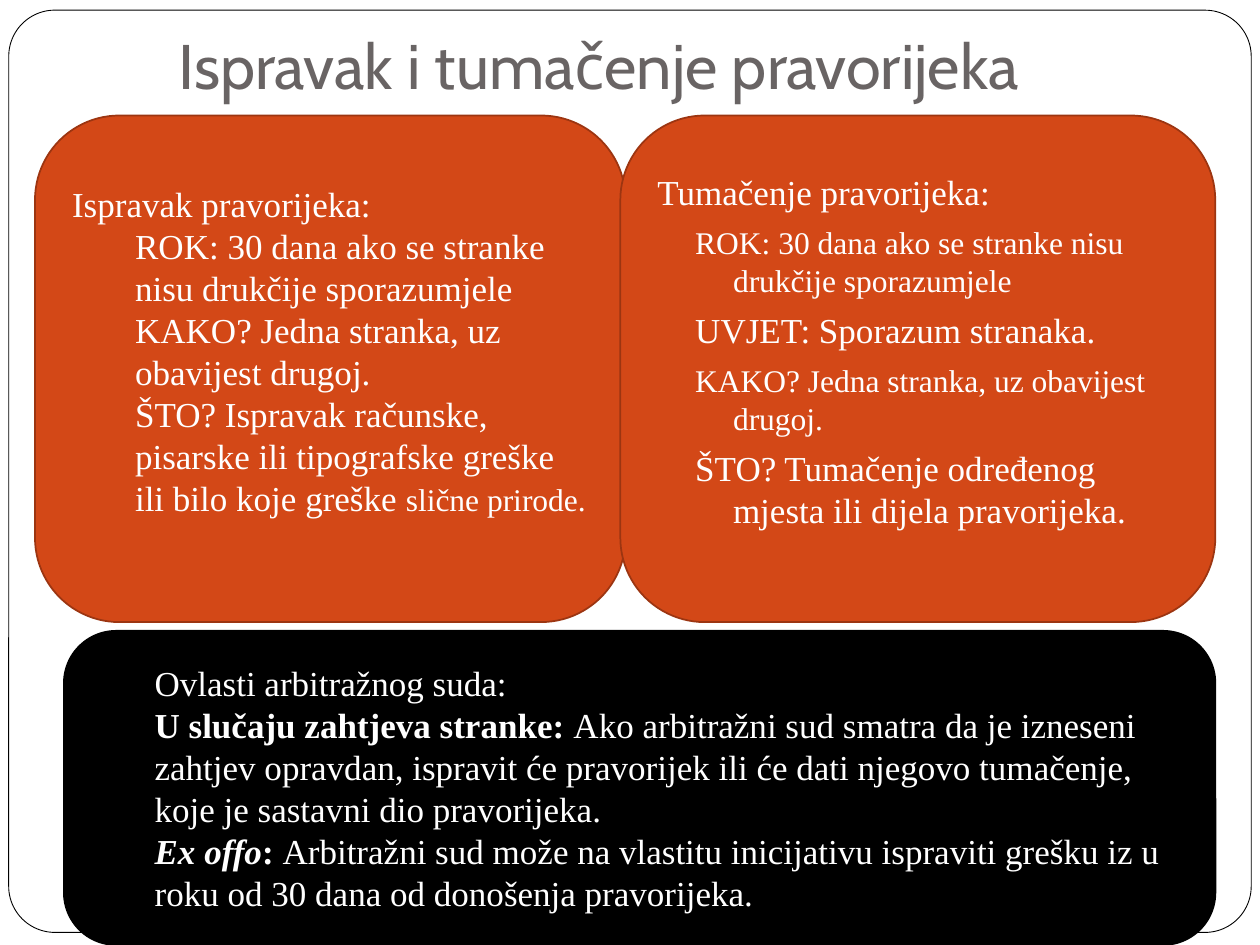
import pptx
import pptx.util
import pptx.dml.color
import pptx.enum.shapes
import pptx.enum.text

Pt = pptx.util.Pt
ANCHOR = pptx.enum.text.MSO_ANCHOR

COLORS = {
    "white": "FFFFFF",
    "black": "000000",
    "title": "696464",
    "orange": "D34817",
    "rust": "9C3511",
}
SERIF = {"name": "Times New Roman", "size": Pt(20), "color": "white"}
SMALL = {"size": Pt(18)}
BOLD = {"bold": True}
BOLD_ITALIC = {"bold": True, "italic": True}

PLAIN = {"level": 0, "left": 0, "first": 0, "before": 0}
NESTED = {"level": 1, "left": 36, "first": 0, "before": 0}
HANGING = {"level": 2, "left": 43.2, "first": -21.6, "before": 5.8}
TITLE_INDENT = {"level": 0, "left": 23, "first": 0, "before": 0}

FRAME = {"at": (5, 5.8, 710, 527), "fill": "white", "line": "black",
         "width": 0.5, "corner": 0.05}

TITLE = [(TITLE_INDENT, [("Ispravak i tumačenje pravorijeka", {})])]
TITLE_FONT = {"name": "Cabin", "size": Pt(36), "color": "title"}

CORRECTION = [
    (PLAIN, [("Ispravak pravorijeka:", {})]),
    (NESTED, [("ROK: 30 dana ako se stranke nisu drukčije sporazumjele", {})]),
    (NESTED, [("KAKO? Jedna stranka, uz obavijest drugoj.", {})]),
    (NESTED, [("ŠTO? Ispravak računske, pisarske ili tipografske greške "
               "ili bilo koje greške ", {}), ("slične prirode.", SMALL)]),
]
INTERPRETATION = [
    (PLAIN, [("Tumačenje pravorijeka:", {})]),
    (HANGING, [("ROK: 30 dana ako se stranke nisu drukčije sporazumjele", SMALL)]),
    (HANGING, [("UVJET: Sporazum stranaka.", {})]),
    (HANGING, [("KAKO? Jedna stranka, uz obavijest drugoj.", SMALL)]),
    (HANGING, [("ŠTO? Tumačenje određenog mjesta ili dijela pravorijeka.", {})]),
]
POWERS = [
    (NESTED, [("Ovlasti arbitražnog suda:", {})]),
    (NESTED, [("U slučaju zahtjeva stranke: ", BOLD),
              ("Ako arbitražni sud smatra da je izneseni zahtjev opravdan, "
               "ispravit će pravorijek ili će dati njegovo tumačenje, "
               "koje je sastavni dio pravorijeka.", {})]),
    (NESTED, [("Ex offo", BOLD_ITALIC), (": ", BOLD),
              ("Arbitražni sud može na vlastitu inicijativu ispraviti grešku "
               "iz u roku od 30 dana od donošenja pravorijeka.", {})]),
]

PANELS = [
    {"at": (20, 66, 337.5, 289.5), "fill": "orange", "line": "rust",
     "bottom": 24.3, "text": CORRECTION},
    {"at": (354.5, 66, 340, 289.5), "fill": "orange", "line": "rust",
     "bottom": 24.3, "text": INTERPRETATION},
    {"at": (36.5, 360.5, 658, 179.5), "fill": "black", "line": "black",
     "bottom": 3.6, "text": POWERS},
]


def rgb(name):
    return pptx.dml.color.RGBColor.from_string(COLORS[name])


def add_panel(page, at, fill, line, width=1, corner=0.16667):
    box = page.shapes.add_shape(
        pptx.enum.shapes.MSO_SHAPE.ROUNDED_RECTANGLE, *map(Pt, at))
    box.adjustments[0] = corner
    box.shadow.inherit = False
    box.fill.solid()
    box.fill.fore_color.rgb = rgb(fill)
    box.line.color.rgb = rgb(line)
    box.line.width = Pt(width)
    return box


def write_text(box, content, font, frame_format):
    frame = box.text_frame
    for key, value in {"word_wrap": True, **frame_format}.items():
        setattr(frame, key, value)
    for index, (layout, runs) in enumerate(content):
        para = frame.add_paragraph() if index else frame.paragraphs[0]
        para.alignment = pptx.enum.text.PP_ALIGN.LEFT
        para.level = layout["level"]
        para.space_before = Pt(layout["before"])
        properties = para._p.get_or_add_pPr()
        properties.set("marL", str(int(Pt(layout["left"]))))
        properties.set("indent", str(int(Pt(layout["first"]))))
        for words, changes in runs:
            span = para.add_run()
            span.text = words
            for key, value in {**font, **changes}.items():
                if key == "color":
                    span.font.color.rgb = rgb(value)
                else:
                    setattr(span.font, key, value)


def main():
    deck = pptx.Presentation()
    deck.slide_width, deck.slide_height = Pt(720), Pt(540)
    page = deck.slides.add_slide(deck.slide_layouts[6])

    add_panel(page, **FRAME)
    title = page.shapes.add_textbox(Pt(72), Pt(21.6), Pt(612), Pt(44))
    write_text(title, TITLE, TITLE_FONT, {
        "vertical_anchor": ANCHOR.BOTTOM, "margin_bottom": Pt(7.2)})

    for panel in PANELS:
        box = add_panel(page, panel["at"], panel["fill"], panel["line"])
        write_text(box, panel["text"], SERIF, {
            "vertical_anchor": ANCHOR.MIDDLE,
            "margin_bottom": Pt(panel["bottom"])})

    deck.save("out.pptx")


if __name__ == "__main__":
    main()
